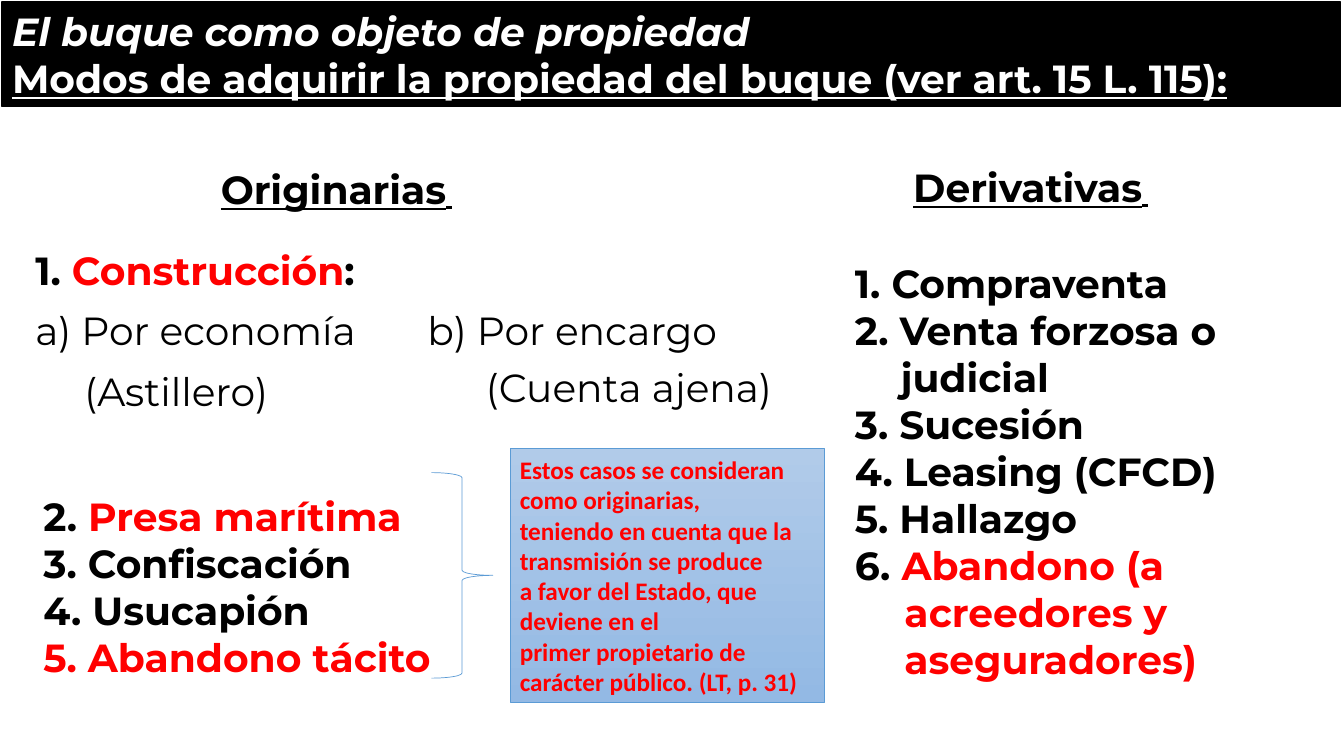
from lxml.etree import SubElement
from pptx import Presentation
from pptx.dml.color import RGBColor
from pptx.enum.shapes import MSO_SHAPE
from pptx.enum.text import MSO_ANCHOR, MSO_AUTO_SIZE, PP_ALIGN
from pptx.oxml.ns import qn
from pptx.util import Cm, Pt

COLORS = {"black": "000000", "white": "FFFFFF", "red": "FF0000",
          "blue": "5B9BD5", "light": "B1CBE9", "deep": "93B9E4"}


def rgb(name):
    return RGBColor.from_string(COLORS[name])


def write(sp, box, paragraphs, size=28, font="Montserrat", bold=False,
          underline=False, align=PP_ALIGN.LEFT, anchor=MSO_ANCHOR.TOP):
    sp.left, sp.top, sp.width, sp.height = [Cm(v) for v in box]
    tf = sp.text_frame
    tf.word_wrap = True
    tf.auto_size = MSO_AUTO_SIZE.NONE
    tf.vertical_anchor = anchor
    for i, runs in enumerate(paragraphs):
        p = tf.add_paragraph() if i else tf.paragraphs[0]
        p.alignment = align
        p.space_before = Pt(0)
        if sp.is_placeholder:
            pPr = p._p.get_or_add_pPr()
            pPr.set("marL", "0")
            pPr.set("indent", "0")
            SubElement(pPr, qn("a:buNone"))
        for text, color in runs:
            r = p.add_run()
            r.text = text
            r.font.size = Pt(size)
            r.font.name = font
            r.font.bold = bold
            r.font.underline = underline
            r.font.color.rgb = rgb(color)
    return tf


prs = Presentation()
prs.slide_width, prs.slide_height = Cm(33.87), Cm(19.05)
s = prs.slides.add_slide(prs.slide_layouts[4])
title, left_head, left_list, right_head, right_list = s.placeholders

title.fill.solid()
title.fill.fore_color.rgb = rgb("black")
title.line.color.rgb = rgb("black")
title.line.width = Pt(1)
tf = write(title, (0.05, 0.05, 33.73, 2.64), [
    [("El buque como objeto de propiedad", "white")],
    [("Modos de adquirir la propiedad del buque (ver art. 15 L. 115):", "white")],
], bold=True, align=PP_ALIGN.JUSTIFY, anchor=MSO_ANCHOR.MIDDLE)
tf.paragraphs[0].runs[0].font.italic = True
tf.paragraphs[1].runs[0].font.underline = True

for head, text, box in [
    (left_head, "Originarias", (5.31, 4.04, 6.63, 1.45)),
    (right_head, "Derivativas", (22.76, 3.99, 6.78, 1.45)),
]:
    tf = write(head, box, [[(text, "black"), (" ", "black")]],
               bold=True, underline=True)
    space = tf.paragraphs[0].runs[1].font
    space.size, space.name, space.bold = Pt(18), "Calibri", False

write(left_list, (0.84, 12.27, 10.8, 5.05), [
    [("2. ", "black"), ("Presa marítima", "red")],
    [("3. Confiscación", "black")],
    [("4. Usucapión", "black")],
    [("5. Abandono tácito", "red")],
], bold=True)

tf = write(right_list, (21.29, 6.4, 12.27, 11.02), [
    [("1. Compraventa", "black")],
    [("2. Venta forzosa o", "black")],
    [("judicial", "black")],
    [("3. Sucesión", "black")],
    [("4. Leasing (CFCD)", "black")],
    [("5. Hallazgo", "black")],
    [("6. ", "black"), ("Abandono (a acreedores y aseguradores)", "red")],
], bold=True)
for i, margin, indent in [(2, 1.15, 0), (6, 1.25, -1.25)]:
    pPr = tf.paragraphs[i]._p.get_or_add_pPr()
    pPr.set("marL", str(Cm(margin)))
    pPr.set("indent", str(Cm(indent)))

for runs, box, bold, align in [
    ([("1. ", "black"), ("Construcción", "red"), (":", "black")],
     (0.64, 6.07, 9.45, 1.45), True, PP_ALIGN.LEFT),
    ([("a) Por economía", "black")], (0.64, 7.59, 9.35, 1.45), False, PP_ALIGN.LEFT),
    ([("b) Por encargo", "black")], (10.52, 7.59, 8.48, 1.45), False, PP_ALIGN.LEFT),
    ([("(Astillero)", "black")], (1.88, 9.14, 6.1, 1.45), False, PP_ALIGN.LEFT),
    ([("(Cuenta ajena)", "black")], (11.61, 9.02, 8.48, 1.45), False, PP_ALIGN.CENTER),
]:
    sp = s.shapes.add_textbox(0, 0, 0, 0)
    write(sp, box, [runs], bold=bold, align=align)

brace = s.shapes.add_shape(MSO_SHAPE.RIGHT_BRACE, Cm(10.87), Cm(11.91), Cm(1.55), Cm(5.18))
brace.fill.background()
note = s.shapes.add_shape(MSO_SHAPE.RECTANGLE, 0, 0, 0, 0)
note.fill.gradient()
note.fill.gradient_angle = 270
for stop, color in zip(note.fill.gradient_stops, ["light", "deep"]):
    stop.color.rgb = rgb(color)
for sp in (brace, note):
    sp.shadow.inherit = False
    sp.line.color.rgb = rgb("blue")
    sp.line.width = Pt(0.5)

write(note, (12.85, 11.3, 7.92, 6.4), [
    [("Estos casos se consideran como originarias,", "red")],
    [("teniendo en cuenta que la transmisión se produce", "red")],
    [("a favor del Estado, que deviene en el", "red")],
    [("primer propietario de carácter público. (LT, p. 31)", "red")],
], size=18, font="Calibri", bold=True, anchor=MSO_ANCHOR.MIDDLE)

prs.save("out.pptx")
